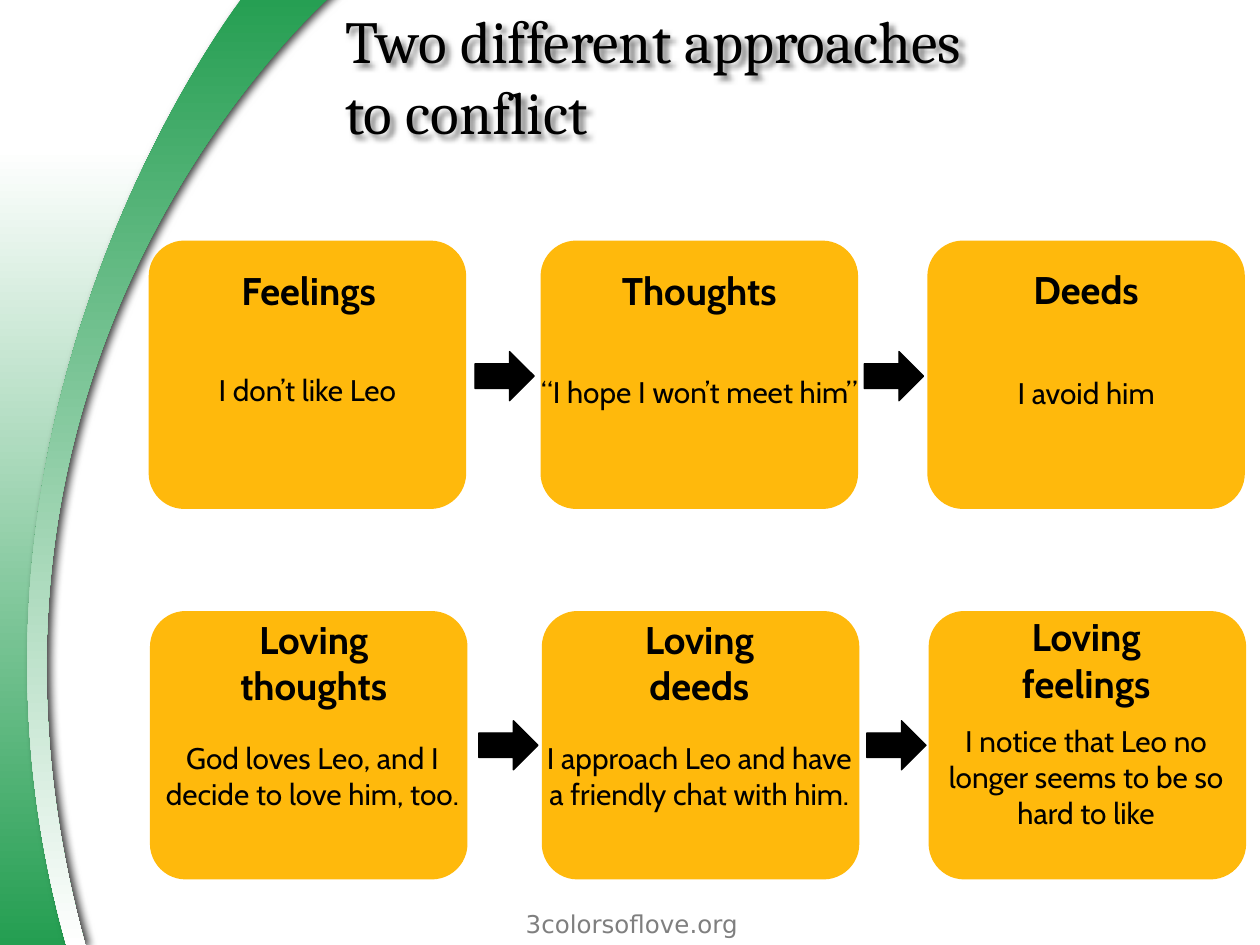
"""Build a slide contrasting two approaches to conflict as two rows of linked cards."""
from dataclasses import dataclass

from lxml import etree
from pptx import Presentation
from pptx.dml.color import RGBColor
from pptx.enum import shapes, text
from pptx.oxml import ns
from pptx.util import Inches, Pt

BLACK = RGBColor(0x00, 0x00, 0x00)
WHITE = RGBColor(0xFF, 0xFF, 0xFF)
GREEN = RGBColor(0x24, 0x9E, 0x51)
AMBER = RGBColor(0xFF, 0xB9, 0x0C)
GRAY = RGBColor(0x7F, 0x7F, 0x7F)

Point = tuple[float, float]
CARD_WIDTH, CARD_HEIGHT = 2.52, 2.13
LABEL_HEIGHT = 0.67
ARROW_WIDTH, ARROW_HEIGHT = 0.47, 0.39
COLUMNS = (1.18, 4.29, 7.36)


@dataclass(frozen=True)
class TextStyle:
    font: str
    size: float
    color: RGBColor = BLACK
    bold: bool = False


@dataclass(frozen=True)
class Band:
    start: Point
    segments: tuple[tuple[Point, ...], ...]
    top: RGBColor
    bottom: RGBColor


@dataclass(frozen=True)
class Card:
    heading: tuple[str, ...]
    body: str
    heading_left: float
    heading_top: float
    body_left: float
    body_top: float
    heading_width: float = CARD_WIDTH
    body_width: float = CARD_WIDTH


@dataclass(frozen=True)
class Row:
    top: float
    shift: float
    arrow_lefts: tuple[float, ...]
    arrow_top: float
    cards: tuple[Card, ...]


TITLE = TextStyle("Cambria", 34)
HEADING = TextStyle("Cabin", 22, bold=True)
BODY = TextStyle("Cabin", 17)
FOOTER = TextStyle("DejaVu Sans", 14, GRAY)

EDGE = Band((0, 1.17), (
    ((0.65, 1.17), (0.41, 1.17), (1.51, 1.17)),
    ((-0.35, 4.32), (0.5, 6.89), (0.65, 7.5)),
    ((0.32, 7.5), (0, 7.5), (0, 7.5)),
    ((-0.11, 6.44), (0, 1.17), (0, 1.17)),
), WHITE, GREEN)
SWEEP = Band((0.53, 7.51), (
    ((0.61, 7.51), (0.68, 7.51), (0.68, 7.51)),
    ((-0.64, 2.73), (2.67, -0.07), (2.67, -0.07)),
    ((1.97, -0.08),),
    ((1.97, -0.08), (-0.67, 3.26), (0.53, 7.51)),
), GREEN, WHITE)

ROWS = (
    Row(1.91, 0, (3.77, 6.86), 2.79, (
        Card(("Feelings",), "I don’t like Leo", 1.19, 1.97, 1.22, 2.76, body_width=2.44),
        Card(("Thoughts",), "“I hope I won’t meet him”", 4.29, 1.97, 4.29, 2.77),
        Card(("Deeds",), "I avoid him", 7.36, 1.96, 7.36, 2.78),
    )),
    Row(4.85, 0.01, (3.8, 6.88), 5.72, (
        Card(("Loving", "thoughts"), "God loves Leo, and I decide to love him, too.",
             1.24, 4.92, 1.22, 5.82, heading_width=2.5),
        Card(("Loving", "deeds"), "I approach Leo and have a friendly chat with him.",
             4.29, 4.92, 4.29, 5.82),
        Card(("Loving", "feelings"), "I notice that Leo no longer seems to be so hard to like",
             7.36, 4.9, 7.36, 5.83),
    )),
)


def add_shadow(shape, blur: float, distance: float, angle: int, alpha: int) -> None:
    """Give a shape an outer black shadow."""
    shape.shadow.inherit = False
    effects = shape.element.spPr.find(ns.qn("a:effectLst"))
    shadow = etree.SubElement(effects, ns.qn("a:outerShdw"), blurRad=str(Pt(blur)),
                              dist=str(Pt(distance)), dir=str(angle * 60000),
                              algn="tl", rotWithShape="0")
    color = etree.SubElement(shadow, ns.qn("a:srgbClr"), val=str(BLACK))
    etree.SubElement(color, ns.qn("a:alpha"), val=str(alpha * 1000))


def add_band(page, band: Band):
    """Draw a curved outline with a vertical gradient."""
    points = [(Inches(x), Inches(y)) for segment in band.segments for x, y in segment]
    builder = page.shapes.build_freeform(*(Inches(value) for value in band.start))
    builder.add_line_segments(points, close=True)
    shape = builder.convert_to_shape()
    steps = iter(list(shape.element.iter(ns.qn("a:lnTo"))))
    for segment in band.segments:
        group = [next(steps) for _ in segment]
        if len(group) == 3:
            bezier = etree.Element(ns.qn("a:cubicBezTo"))
            group[0].addprevious(bezier)
            for step in group:
                bezier.append(step[0])
                step.getparent().remove(step)
    shape.shadow.inherit = False
    shape.line.fill.background()
    shape.fill.gradient()
    shape.fill.gradient_angle = 270
    for stop, color, position in zip(shape.fill.gradient_stops, (band.top, band.bottom), (0, 1)):
        stop.color.rgb = color
        stop.position = position
    return shape


def add_span(para, wording: str, style: TextStyle) -> None:
    """Add one formatted run."""
    span = para.add_run()
    span.text = wording
    span.font.name, span.font.size = style.font, Pt(style.size)
    span.font.bold = style.bold
    span.font.color.rgb = style.color


def add_label(page, left: float, top: float, width: float, height: float,
              lines: tuple[str, ...], style: TextStyle) -> None:
    """Add centred text in a box without margins."""
    box = page.shapes.add_textbox(Inches(left), Inches(top), Inches(width), Inches(height))
    frame = box.text_frame
    frame.word_wrap = True
    frame.vertical_anchor = text.MSO_ANCHOR.MIDDLE
    frame.margin_left = frame.margin_right = frame.margin_top = frame.margin_bottom = 0
    for index, line in enumerate(lines):
        para = frame.add_paragraph() if index else frame.paragraphs[0]
        para.alignment = text.PP_ALIGN.CENTER
        add_span(para, line, style)


def add_solid(page, kind, left: float, top: float, width: float, height: float,
              color: RGBColor):
    """Add a flat preset shape without outline."""
    solid = page.shapes.add_shape(kind, Inches(left), Inches(top), Inches(width), Inches(height))
    solid.shadow.inherit = False
    solid.fill.solid()
    solid.fill.fore_color.rgb = color
    solid.line.fill.background()
    return solid


def add_row(page, row: Row) -> None:
    """Draw the cards of a row and the arrows between them."""
    for column, card in zip(COLUMNS, row.cards):
        panel = add_solid(page, shapes.MSO_SHAPE.ROUNDED_RECTANGLE, column + row.shift, row.top,
                          CARD_WIDTH, CARD_HEIGHT, AMBER)
        panel.adjustments[0] = 0.133
        add_label(page, card.heading_left, card.heading_top, card.heading_width, LABEL_HEIGHT,
                  card.heading, HEADING)
        add_label(page, card.body_left, card.body_top, card.body_width, LABEL_HEIGHT,
                  (card.body,), BODY)
    for left in row.arrow_lefts:
        arrow = add_solid(page, shapes.MSO_SHAPE.RIGHT_ARROW, left, row.arrow_top,
                          ARROW_WIDTH, ARROW_HEIGHT, BLACK)
        arrow.line.color.rgb = BLACK
        arrow.line.width = Pt(0.75)


def set_title(page) -> None:
    """Place the title above the bands and give its letters a shadow."""
    title = page.shapes.title
    title.element.getparent().append(title.element)
    title.left, title.top = Inches(2.64), Inches(0)
    title.width, title.height = Inches(7.36), Inches(1.19)
    add_shadow(title, 3, 3, 45, 50)
    frame = title.text_frame
    frame.auto_size = text.MSO_AUTO_SIZE.NONE
    frame.vertical_anchor = text.MSO_ANCHOR.MIDDLE
    para = frame.paragraphs[0]
    para.alignment = text.PP_ALIGN.LEFT
    add_span(para, "Two different approaches", TITLE)
    para.add_line_break()
    add_span(para, "to conflict", TITLE)


def main() -> None:
    """Build and save the deck."""
    deck = Presentation()
    deck.slide_width, deck.slide_height = Inches(10), Inches(7.5)
    page = deck.slides.add_slide(deck.slide_layouts[5])
    add_band(page, EDGE)
    add_shadow(add_band(page, SWEEP), 5, 3, 0, 75)
    set_title(page)
    add_label(page, 3.43, 7.17, 3.17, 0.33, ("3colorsoflove.org",), FOOTER)
    for row in ROWS:
        add_row(page, row)
    deck.save("out.pptx")


if __name__ == "__main__":
    main()
